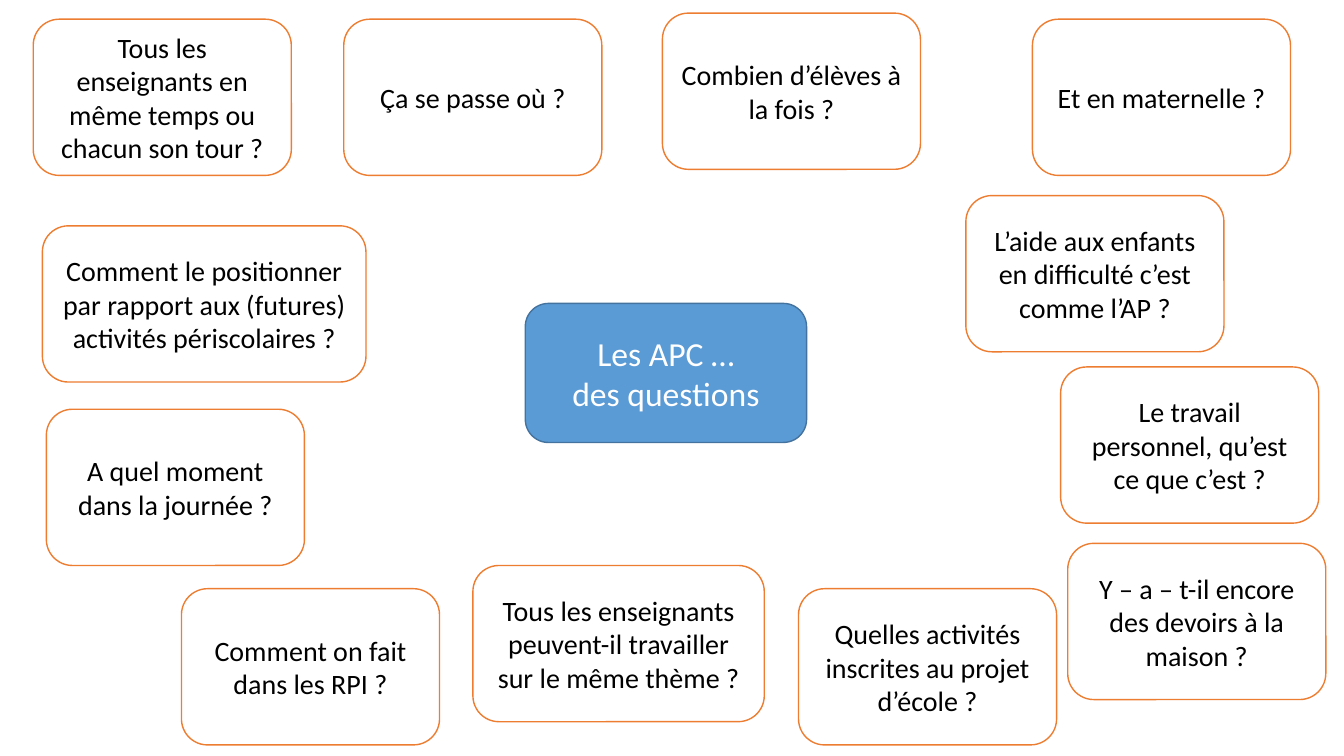
from pptx import Presentation
from pptx.dml.color import RGBColor
from pptx.enum.shapes import MSO_SHAPE
from pptx.enum.text import MSO_ANCHOR, PP_ALIGN
from pptx.util import Inches, Pt

WHITE = RGBColor(0xFF, 0xFF, 0xFF)
BLACK = RGBColor(0x00, 0x00, 0x00)
BLUE = RGBColor(0x5B, 0x9B, 0xD5)
DARK_BLUE = RGBColor(0x43, 0x73, 0x9E)
ORANGE = RGBColor(0xED, 0x7D, 0x31)

TOPIC_STYLE = {"fill": BLUE, "line": DARK_BLUE,
               "font": {"name": "Calibri", "size": Pt(24)}, "text": WHITE}
QUESTION_STYLE = {"fill": WHITE, "line": ORANGE,
                  "font": {"name": "Calibri", "size": Pt(20)}, "text": BLACK}

QUESTION_WIDTH, QUESTION_HEIGHT = 2.56, 1.55

# Left, top, width and wording of each question
QUESTIONS = [
    (0.33, 0.19, QUESTION_WIDTH, "Tous les enseignants en même temps ou chacun son tour ?"),
    (7.92, 5.84, QUESTION_WIDTH, "Quelles activités inscrites au projet d’école ?"),
    (10.52, 3.64, QUESTION_WIDTH, "Le travail personnel, qu’est ce que c’est ?"),
    (9.58, 1.94, QUESTION_WIDTH, "L’aide aux enfants en difficulté c’est comme l’AP ?"),
    (6.57, 0.13, QUESTION_WIDTH, "Combien d’élèves à la fois ?"),
    (0.46, 4.06, QUESTION_WIDTH, "A quel moment dans la journée ?"),
    (4.69, 5.61, 2.89, "Tous les enseignants peuvent-il travailler sur le même thème ?"),
    (1.8, 5.84, QUESTION_WIDTH, "Comment on fait dans les RPI ?"),
    (10.59, 5.39, QUESTION_WIDTH, "Y – a – t-il encore des devoirs à la maison ?"),
    (0.42, 2.24, 3.21, "Comment le positionner par rapport aux (futures) activités périscolaires ?"),
    (3.41, 0.19, QUESTION_WIDTH, "Ça se passe où ?"),
    (10.24, 0.19, QUESTION_WIDTH, "Et en maternelle ?"),
]


class MindMap:
    """Draws rounded cards in a given style on the current slide."""

    def __init__(self, slide):
        self.slide = slide

    def card(self, left, top, width, height, lines, style):
        card = self.slide.shapes.add_shape(
            MSO_SHAPE.ROUNDED_RECTANGLE,
            Inches(left), Inches(top), Inches(width), Inches(height))
        card.shadow.inherit = False
        card.fill.solid()
        card.fill.fore_color.rgb = style["fill"]
        card.line.color.rgb = style["line"]
        card.line.width = Pt(1)
        self.label(card.text_frame, lines, style)

    def label(self, frame, lines, style):
        frame.word_wrap = True
        frame.vertical_anchor = MSO_ANCHOR.MIDDLE
        frame.text = "\n".join(lines)
        for paragraph in frame.paragraphs:
            paragraph.alignment = PP_ALIGN.CENTER
            font = paragraph.runs[0].font
            for attribute, value in style["font"].items():
                setattr(font, attribute, value)
            font.color.rgb = style["text"]

    def topic(self, left, top, width, height, lines):
        self.card(left, top, width, height, lines, TOPIC_STYLE)

    def question(self, left, top, width, wording):
        self.card(left, top, width, QUESTION_HEIGHT, [wording], QUESTION_STYLE)


def main():
    presentation = Presentation()
    presentation.slide_width = Inches(13.33)
    presentation.slide_height = Inches(7.5)
    mind_map = MindMap(presentation.slides.add_slide(presentation.slide_layouts[6]))

    # Central topic
    mind_map.topic(5.21, 3.01, 2.79, 1.38, ["Les APC …", "des questions"])

    # Surrounding questions
    for question in QUESTIONS:
        mind_map.question(*question)

    presentation.save("out.pptx")


if __name__ == "__main__":
    main()
